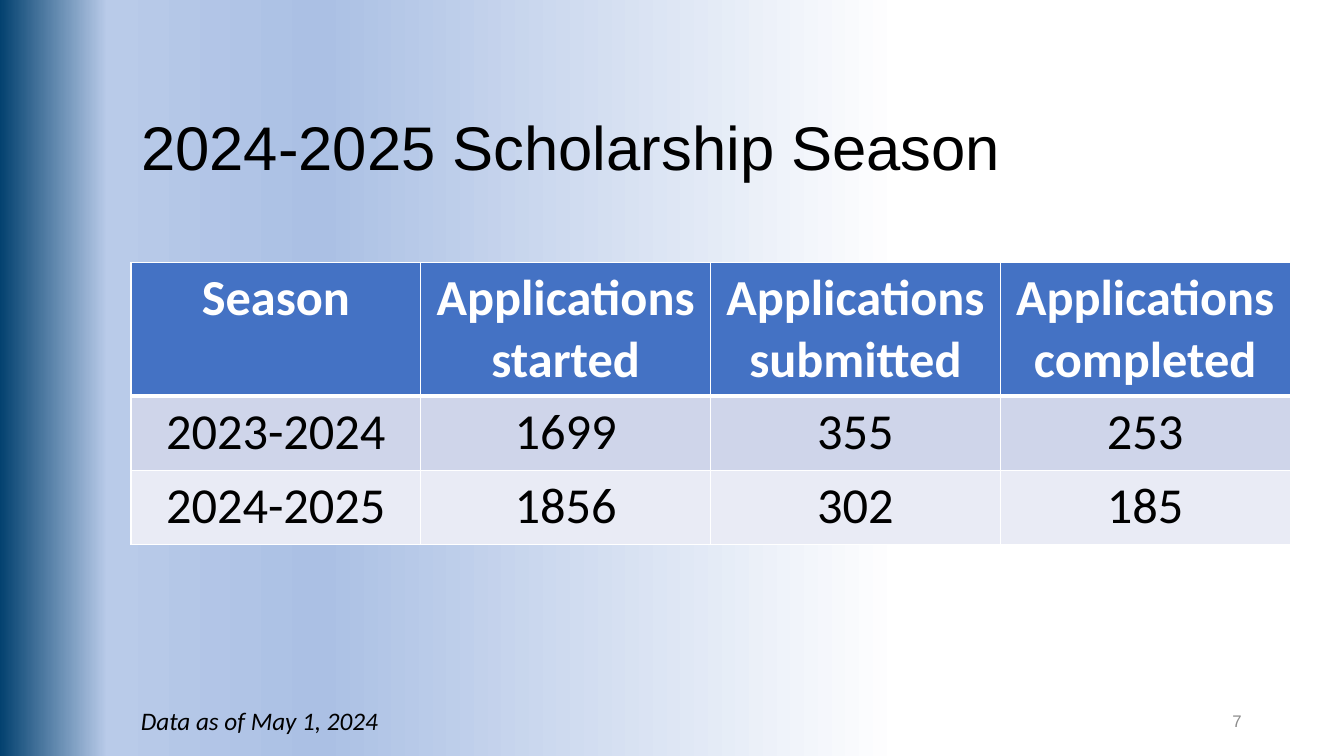
from lxml import etree
from pptx import Presentation
from pptx.dml.color import RGBColor
from pptx.enum.text import MSO_ANCHOR, PP_ALIGN
from pptx.oxml.ns import qn
from pptx.util import Pt

LEFT, CENTER, RIGHT = PP_ALIGN.LEFT, PP_ALIGN.CENTER, PP_ALIGN.RIGHT
TOP, MIDDLE = MSO_ANCHOR.TOP, MSO_ANCHOR.MIDDLE

BLACK = RGBColor(0x00, 0x00, 0x00)
WHITE = RGBColor(0xFF, 0xFF, 0xFF)
GRAY = RGBColor(0x8C, 0x8C, 0x8C)
HEADER_BLUE = RGBColor(0x44, 0x72, 0xC4)
BAND_COLORS = (RGBColor(0xCF, 0xD5, 0xEA), RGBColor(0xE9, 0xEB, 0xF5))
BACKGROUND_STOPS = (
    (33, WHITE),
    (76, RGBColor(0xAB, 0xC0, 0xE4)),
    (92, RGBColor(0xB9, 0xCB, 0xE9)),
    (100, RGBColor(0x03, 0x41, 0x6F)),
    (100, RGBColor(0x00, 0x58, 0x90)),
)

SEASON_ROWS = (
    ("Season", "Applications started", "Applications submitted", "Applications completed"),
    ("2023-2024", "1699", "355", "253"),
    ("2024-2025", "1856", "302", "185"),
)
HEADER_HEIGHT, ROW_HEIGHT = 95, 53
MARGIN, CONTENT_WIDTH = 93.6, 828
FOOTER_TOP, FOOTER_HEIGHT = 500.4, 28.8


def write_text(frame, text, *, size, font="Calibri", color=BLACK, bold=False,
               italic=False, align=LEFT, anchor=TOP, wrap=True, line_spacing=1.0):
    frame.word_wrap = wrap
    frame.vertical_anchor = anchor
    para = frame.paragraphs[0]
    para.alignment = align
    para.line_spacing = line_spacing
    span = para.add_run()
    span.text = text
    span.font.name = font
    span.font.size = Pt(size)
    span.font.bold = bold
    span.font.italic = italic
    span.font.color.rgb = color


def paint_background(page):
    """Fill the page with a gradient that runs from right to left."""
    fill = page.background.fill
    fill.gradient()
    fill.gradient_angle = 180
    stops = next(page.element.iter(qn("a:gsLst")))
    for stop in list(stops):
        stops.remove(stop)
    for percent, color in BACKGROUND_STOPS:
        stop = etree.SubElement(stops, qn("a:gs"), pos=str(percent * 1000))
        etree.SubElement(stop, qn("a:srgbClr"), val=str(color))


def add_title(page, text, left, top, width, height):
    title = page.shapes.title
    title.left, title.top = Pt(left), Pt(top)
    title.width, title.height = Pt(width), Pt(height)
    write_text(title.text_frame, text, size=44, font="Arial", anchor=MIDDLE,
               line_spacing=0.9)


def add_cell_borders(cell, **widths):
    """Draw white borders; each keyword names a side, L, R, T or B, and its width."""
    properties = cell._tc.get_or_add_tcPr()
    for side, width in widths.items():
        line = etree.SubElement(properties, qn(f"a:ln{side}"), w=str(Pt(width)))
        solid = etree.SubElement(line, qn("a:solidFill"))
        etree.SubElement(solid, qn("a:srgbClr"), val=str(WHITE))


def add_season_table(page, left, top, width):
    row_count, column_count = len(SEASON_ROWS), len(SEASON_ROWS[0])
    height = HEADER_HEIGHT + (row_count - 1) * ROW_HEIGHT
    table = page.shapes.add_table(row_count, column_count, Pt(left), Pt(top),
                                  Pt(width), Pt(height)).table
    for column in table.columns:
        column.width = Pt(width / column_count)
    for row_index, values in enumerate(SEASON_ROWS):
        header = row_index == 0
        table.rows[row_index].height = Pt(HEADER_HEIGHT if header else ROW_HEIGHT)
        for column_index, value in enumerate(values):
            cell = table.cell(row_index, column_index)
            add_cell_borders(cell, L=1, R=1, T=3 if row_index == 1 else 1,
                             B=3 if header else 1)
            cell.fill.solid()
            cell.fill.fore_color.rgb = (
                HEADER_BLUE if header else BAND_COLORS[(row_index - 1) % 2])
            write_text(cell.text_frame, value, size=36, bold=header, align=CENTER,
                       color=WHITE if header else BLACK)


def add_label(page, text, left, top, width, height, **text_format):
    box = page.shapes.add_textbox(Pt(left), Pt(top), Pt(width), Pt(height))
    write_text(box.text_frame, text, **text_format)


def build_season_slide(deck):
    page = deck.slides.add_slide(deck.slide_layouts[5])
    paint_background(page)
    add_title(page, "2024-2025 Scholarship Season", MARGIN, 55.4, CONTENT_WIDTH, 104.4)
    add_season_table(page, MARGIN, 187.6, CONTENT_WIDTH)
    add_label(page, "7", 678, FOOTER_TOP, 216, FOOTER_HEIGHT, size=12,
              font="Arial", color=GRAY, align=RIGHT, anchor=MIDDLE)
    add_label(page, "Data as of May 1, 2024", MARGIN, FOOTER_TOP, 186, FOOTER_HEIGHT,
              size=18, italic=True, wrap=False)


def main():
    deck = Presentation()
    deck.slide_width, deck.slide_height = Pt(960), Pt(540)
    build_season_slide(deck)
    deck.save("out.pptx")


if __name__ == "__main__":
    main()
